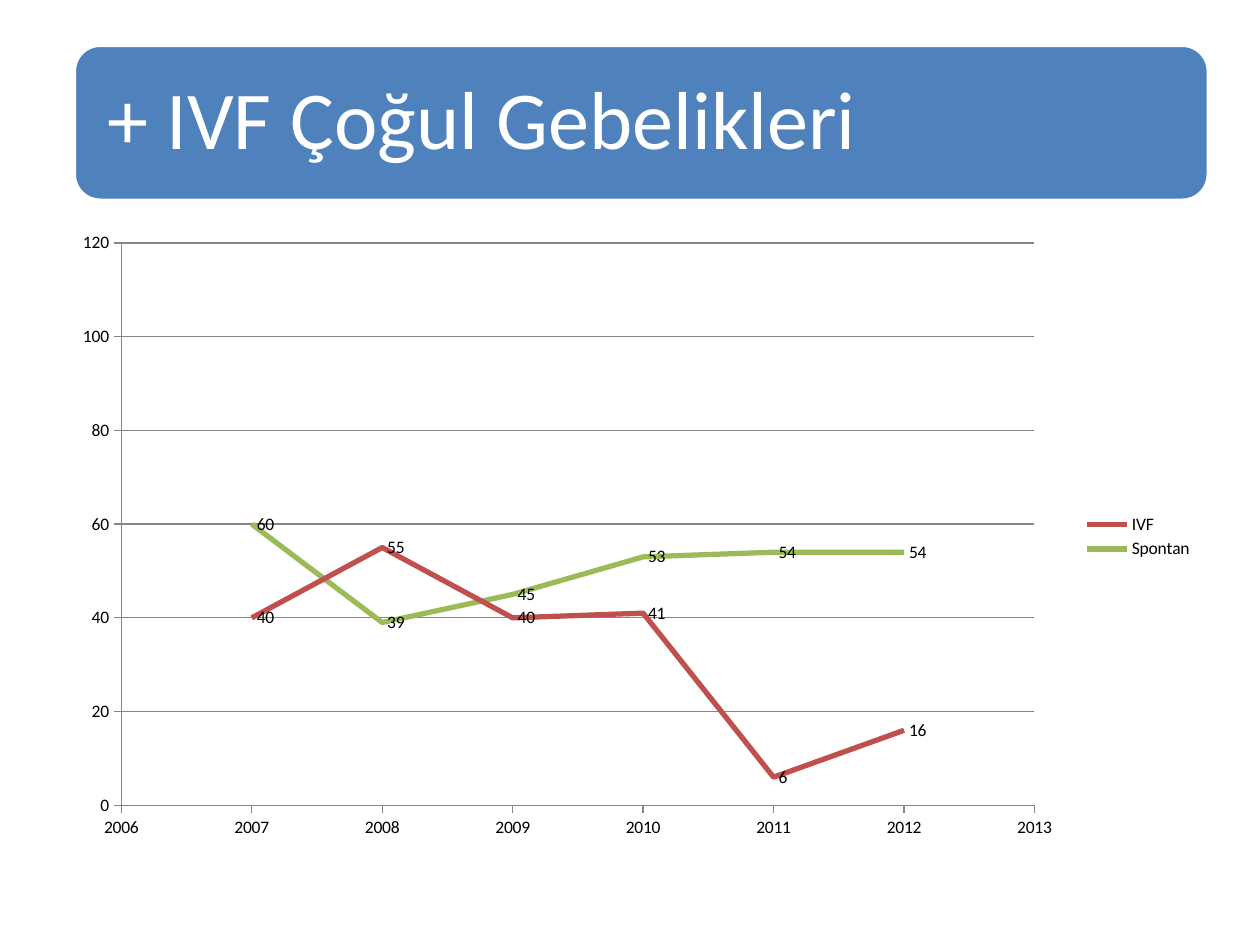
from dataclasses import dataclass

from lxml.etree import SubElement
from pptx import Presentation
from pptx.chart.data import XyChartData
from pptx.chart.datalabel import DataLabels
from pptx.dml.color import RGBColor
from pptx.enum.chart import XL_CHART_TYPE as ChartType
from pptx.enum.chart import XL_LABEL_POSITION as LabelPosition
from pptx.enum.chart import XL_LEGEND_POSITION as LegendPosition
from pptx.enum.chart import XL_TICK_MARK as TickMark
from pptx.enum.shapes import MSO_SHAPE as Shape
from pptx.enum.text import MSO_ANCHOR as Anchor
from pptx.enum.text import PP_ALIGN as Align
from pptx.oxml.ns import qn
from pptx.util import Inches, Pt


@dataclass(frozen=True)
class Theme:
    font: str = "Calibri"
    title_size: Pt = Pt(47)
    chart_size: Pt = Pt(10)
    banner: RGBColor = RGBColor(0x4F, 0x81, 0xBD)
    white: RGBColor = RGBColor(0xFF, 0xFF, 0xFF)
    black: RGBColor = RGBColor(0, 0, 0)
    grid: RGBColor = RGBColor(0x86, 0x86, 0x86)
    red: RGBColor = RGBColor(0xC0, 0x50, 0x4D)
    green: RGBColor = RGBColor(0x9B, 0xBB, 0x59)


@dataclass(frozen=True)
class Trend:
    name: str
    values: tuple[int, ...]
    color: RGBColor


THEME = Theme()
YEARS = range(2007, 2013)
TRENDS = (
    Trend("IVF", (40, 55, 40, 41, 6, 16), THEME.red),
    Trend("Spontan", (60, 39, 45, 53, 54, 54), THEME.green),
)


def add_banner(slide, title: str) -> None:
    banner = slide.shapes.add_shape(
        Shape.ROUNDED_RECTANGLE, Inches(0.59), Inches(0.36), Inches(9), Inches(1.23))
    banner.shadow.inherit = False
    banner.fill.solid()
    banner.fill.fore_color.rgb = THEME.banner
    banner.line.color.rgb = THEME.white
    banner.line.width = Pt(2)

    frame = banner.text_frame
    frame.word_wrap = True
    frame.vertical_anchor = Anchor.MIDDLE
    # The shape adds its own corner inset of about 0.06 inches
    frame.margin_left = frame.margin_right = Inches(0.2)
    frame.margin_top = frame.margin_bottom = Inches(0.2)
    heading = frame.paragraphs[0]
    heading.text = title
    heading.alignment = Align.LEFT
    heading.line_spacing = 0.9
    heading.font.name = THEME.font
    heading.font.size = THEME.title_size
    heading.font.color.rgb = THEME.white


def style_axis(axis, low: int, high: int, step: int, grid: bool) -> None:
    axis.minimum_scale, axis.maximum_scale, axis.major_unit = low, high, step
    axis.major_tick_mark = TickMark.OUTSIDE
    axis.minor_tick_mark = TickMark.NONE
    axis.has_major_gridlines = grid
    axis.tick_labels.number_format = "General"
    axis.tick_labels.number_format_is_linked = False
    lines = [axis.format.line]
    if grid:
        lines.append(axis.major_gridlines.format.line)
    for line in lines:
        line.color.rgb = THEME.grid
        line.width = Pt(0.75)


def place_plot(chart, x: float, y: float, w: float, h: float) -> None:
    """Fix the inner plot area, as fractions of the chart."""
    plot_area = chart._chartSpace.chart.plotArea
    layout = plot_area.find(qn("c:layout"))
    if layout is None:
        layout = SubElement(plot_area, qn("c:layout"))
        plot_area.insert(0, layout)
    manual = SubElement(layout, qn("c:manualLayout"))
    settings = {"layoutTarget": "inner", "xMode": "edge", "yMode": "edge",
                "x": x, "y": y, "w": w, "h": h}
    for tag, value in settings.items():
        SubElement(manual, qn(f"c:{tag}")).set("val", str(value))


def add_trend_chart(slide, trends: tuple[Trend, ...]) -> None:
    data = XyChartData()
    for trend in trends:
        points = data.add_series(trend.name)
        for year, value in zip(YEARS, trend.values):
            points.add_data_point(year, value)
    chart = slide.shapes.add_chart(
        ChartType.XY_SCATTER_LINES_NO_MARKERS,
        Inches(0.51), Inches(1.78), Inches(9.06), Inches(4.96), data).chart
    chart.has_title = False
    chart.font.name = THEME.font
    chart.font.size = THEME.chart_size
    chart.font.color.rgb = THEME.black
    chart.has_legend = True
    chart.legend.position = LegendPosition.RIGHT
    chart.legend.include_in_layout = False
    chart.plots[0].vary_by_categories = False
    place_plot(chart, 0.05, 0.03, 0.8, 0.9)

    # Axes
    style_axis(chart.category_axis, 2006, 2013, 1, grid=False)
    style_axis(chart.value_axis, 0, 120, 20, grid=True)

    # Lines and value labels
    for series, trend in zip(chart.plots[0].series, trends):
        series.smooth = False
        series.format.line.color.rgb = trend.color
        series.format.line.width = Pt(3)
        labels = DataLabels(series._element.get_or_add_dLbls())
        labels.show_value = True
        labels.position = LabelPosition.RIGHT


def main() -> None:
    deck = Presentation()
    deck.slide_width, deck.slide_height = Inches(10), Inches(7.5)
    slide = deck.slides.add_slide(deck.slide_layouts[6])
    add_trend_chart(slide, TRENDS)
    add_banner(slide, "+ IVF Çoğul Gebelikleri")
    deck.save("out.pptx")


if __name__ == "__main__":
    main()
